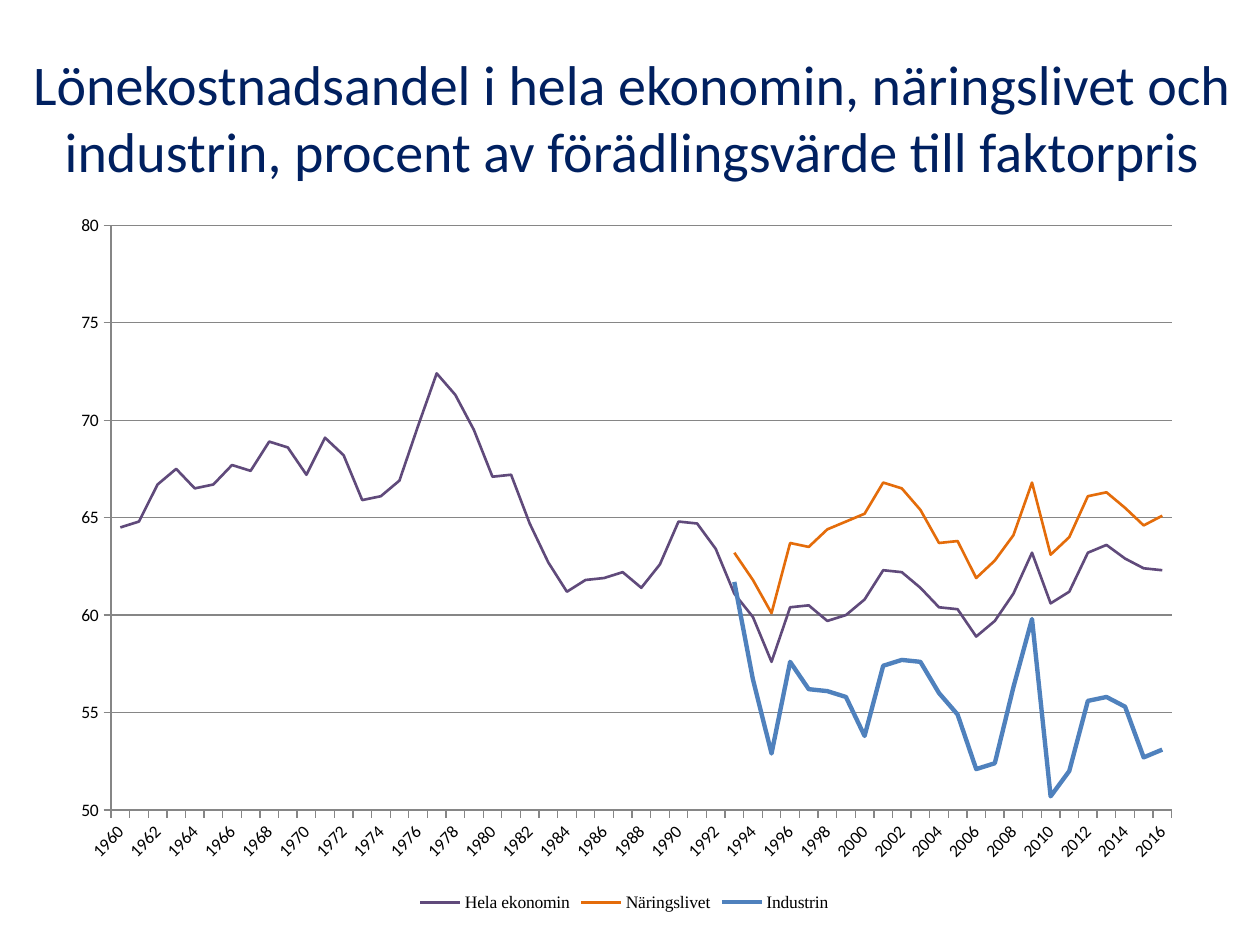
from lxml import etree
from pptx import Presentation
from pptx.chart.data import CategoryChartData
from pptx.dml.color import RGBColor
from pptx.enum.chart import XL_CHART_TYPE as Chart, XL_LEGEND_POSITION as Legend
from pptx.enum.chart import XL_MARKER_STYLE as Marker, XL_TICK_MARK as Tick
from pptx.enum.text import MSO_ANCHOR as Anchor, PP_ALIGN as Align
from pptx.oxml import parse_xml
from pptx.oxml.ns import nsdecls, qn
from pptx.util import Cm, Pt

YEARS = range(1960, 2017)
SHORT_START = 1993  # first year of the two shorter series

# name, colour, line width, values up to 2016
SERIES = [
    ("Hela ekonomin", "604A7B", 1.5, [
        64.5, 64.8, 66.7, 67.5, 66.5, 66.7, 67.7, 67.4, 68.9, 68.6,
        67.2, 69.1, 68.2, 65.9, 66.1, 66.9, 69.7, 72.4, 71.3, 69.5,
        67.1, 67.2, 64.7, 62.7, 61.2, 61.8, 61.9, 62.2, 61.4, 62.6,
        64.8, 64.7, 63.4, 61.1, 59.9, 57.6, 60.4, 60.5, 59.7, 60,
        60.8, 62.3, 62.2, 61.4, 60.4, 60.3, 58.9, 59.7, 61.1, 63.2,
        60.6, 61.2, 63.2, 63.6, 62.9, 62.4, 62.3]),
    ("Näringslivet", "E46C0A", 1.5, [None] * (SHORT_START - YEARS[0]) + [
        63.2, 61.8, 60.1, 63.7, 63.5, 64.4, 64.8, 65.2, 66.8, 66.5,
        65.4, 63.7, 63.8, 61.9, 62.8, 64.1, 66.8, 63.1, 64, 66.1,
        66.3, 65.5, 64.6, 65.1]),
    ("Industrin", "4F81BD", 2.5, [None] * (SHORT_START - YEARS[0]) + [
        61.7, 56.7, 52.9, 57.6, 56.2, 56.1, 55.8, 53.8, 57.4, 57.7,
        57.6, 56, 54.9, 52.1, 52.4, 56.3, 59.8, 50.7, 52, 55.6,
        55.8, 55.3, 52.7, 53.1]),
]


def rgb(code):
    return RGBColor.from_string(code)


class Deck:
    font, ink, title_ink, rule = "Calibri", "000000", "002060", "868686"

    def __init__(self, width, height):
        self.prs = Presentation()
        self.prs.slide_width, self.prs.slide_height = width, height
        self.s = self.prs.slides.add_slide(self.prs.slide_layouts[6])

    def style(self, font, size, color, name=None):
        font.name, font.size = name or self.font, Pt(size)
        font.color.rgb = rgb(color)

    def line(self, fmt, color, width):
        fmt.line.color.rgb = rgb(color)
        fmt.line.width = Pt(width)

    def title(self, text, x, y, w, h):
        tf = self.s.shapes.add_textbox(x, y, w, h).text_frame
        tf.word_wrap = True
        tf.vertical_anchor = Anchor.MIDDLE
        tf.text = text
        p = tf.paragraphs[0]
        p.alignment = Align.CENTER
        self.style(p.runs[0].font, 32, self.title_ink)

    def line_chart(self, cats, series, x, y, w, h):
        data = CategoryChartData()
        data.categories = [str(c) for c in cats]
        for name, _, _, values in series:
            data.add_series(name, values)
        chart = self.s.shapes.add_chart(Chart.LINE, x, y, w, h, data).chart
        chart.has_title = False
        self.style(chart.font, 10, self.ink)
        chart.plots[0].vary_by_categories = False
        for ser, (_, color, width, _) in zip(chart.plots[0].series, series):
            ser.smooth = False
            ser.marker.style = Marker.NONE
            self.line(ser.format, color, width)

        # Legend
        chart.has_legend = True
        chart.legend.position = Legend.BOTTOM
        chart.legend.include_in_layout = False
        self.style(chart.legend.font, 10, self.ink, "Times New Roman")
        return chart

    def axes(self, chart, low, high, step, label_skip):
        cat, val = chart.category_axis, chart.value_axis
        for axis in (cat, val):
            axis.major_tick_mark, axis.minor_tick_mark = Tick.OUTSIDE, Tick.NONE
            self.style(axis.tick_labels.font, 10, self.ink)
            self.line(axis.format, self.rule, 0.75)
        val.minimum_scale, val.maximum_scale, val.major_unit = low, high, step
        val.has_major_gridlines = True
        self.line(val.major_gridlines.format, self.rule, 0.75)
        val.tick_labels.number_format = "0"
        val.tick_labels.number_format_is_linked = False

        # Slanted year labels, a tick for every year
        ax = cat._element
        ax.find(qn("c:txPr")).find(qn("a:bodyPr")).set("rot", "-2700000")
        last = ax.find(qn("c:noMultiLvlLbl"))
        for tag, skip in (("tickLblSkip", label_skip), ("tickMarkSkip", 1)):
            el = etree.Element(qn(f"c:{tag}"), val=str(skip))
            last.addprevious(el)

    def plot_area(self, chart, **box):
        area = chart._chartSpace.find(".//" + qn("c:plotArea"))
        for old in area.findall(qn("c:layout")):
            area.remove(old)
        modes = '<c:xMode val="edge"/><c:yMode val="edge"/>'
        sizes = "".join(f'<c:{k} val="{v}"/>' for k, v in box.items())
        area.insert(0, parse_xml(
            f'<c:layout {nsdecls("c")}><c:manualLayout>'
            f'<c:layoutTarget val="inner"/>{modes}{sizes}'
            f'</c:manualLayout></c:layout>'))


def main():
    deck = Deck(Cm(25.4), Cm(19.05))

    # Title
    deck.title("Lönekostnadsandel i hela ekonomin, näringslivet och industrin, "
               "procent av förädlingsvärde till faktorpris",
               Cm(0.3), Cm(0.76), Cm(24.9), Cm(3.18))

    # Wage share chart
    chart = deck.line_chart(YEARS, SERIES, Cm(1.09), Cm(4.11), Cm(22.99), Cm(14.38))
    deck.axes(chart, low=50, high=80, step=5, label_skip=2)
    deck.plot_area(chart, x=0.05, y=0.03, w=0.93, h=0.82)

    deck.prs.save("out.pptx")


if __name__ == "__main__":
    main()
